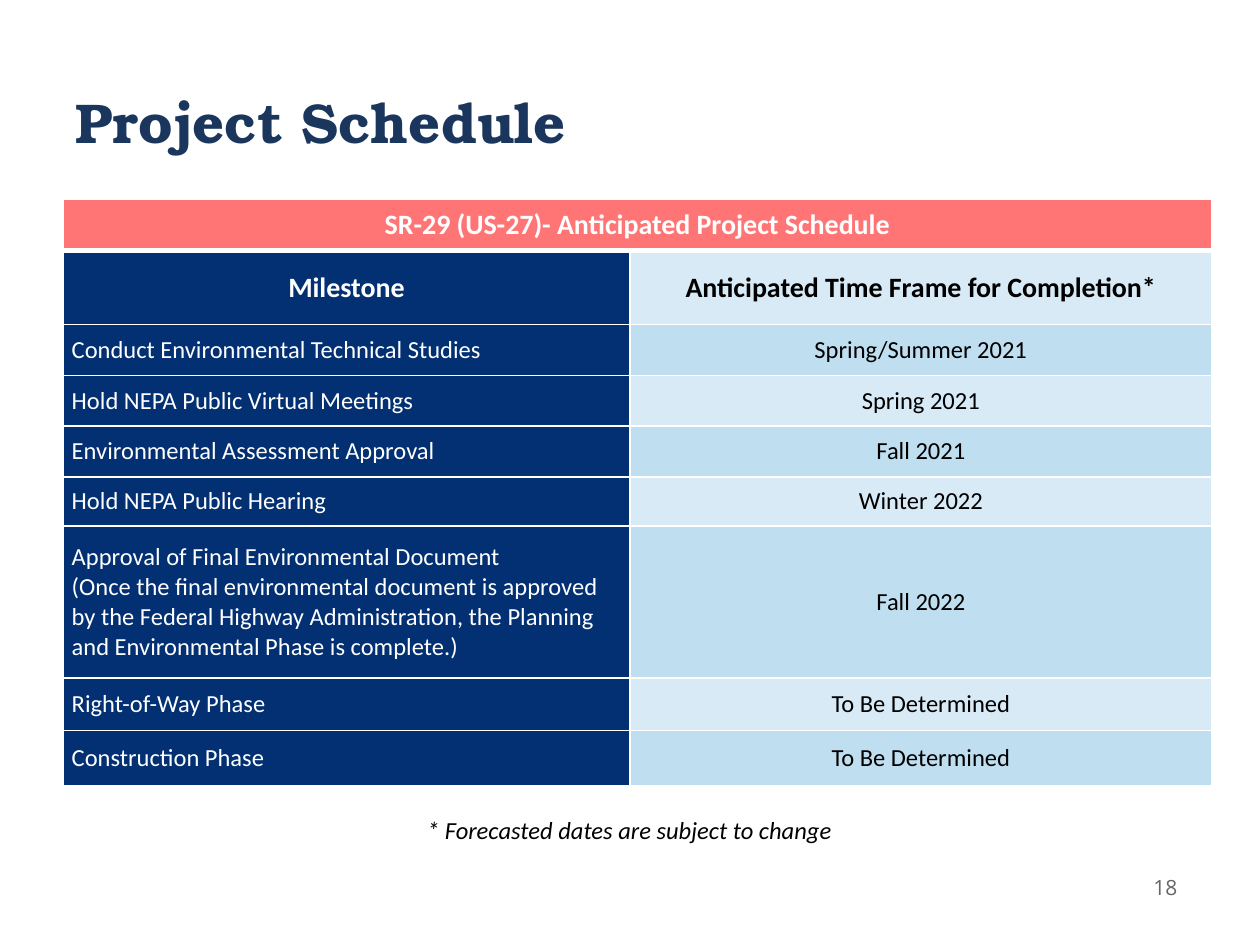
from lxml.etree import SubElement
from pptx import Presentation
from pptx.dml.color import RGBColor
from pptx.enum.text import MSO_ANCHOR, PP_ALIGN
from pptx.oxml.ns import qn
from pptx.util import Pt

NAVY = RGBColor(0x02, 0x30, 0x72)
TITLE_BLUE = RGBColor(0x1B, 0x36, 0x5D)
CORAL = RGBColor(0xFF, 0x75, 0x75)
PALE = RGBColor(0xD7, 0xEA, 0xF5)
SKY = RGBColor(0xBF, 0xDE, 0xEF)
GREY = RGBColor(0x66, 0x66, 0x66)
WHITE = RGBColor(0xFF, 0xFF, 0xFF)
BLACK = RGBColor(0, 0, 0)

TITLE = "Project Schedule"
BANNER = "SR-29 (US-27)- Anticipated Project Schedule"
FOOTNOTE = "* Forecasted dates are subject to change"
PAGE = "18"
SCHEDULE = [  # row height, milestone, time frame
    (42.5, "Milestone", "Anticipated Time Frame for Completion*"),
    (29, "Conduct Environmental Technical Studies", "Spring/Summer 2021"),
    (29, "Hold NEPA Public Virtual Meetings", "Spring 2021"),
    (29, "Environmental Assessment Approval", "Fall 2021"),
    (28, "Hold NEPA Public Hearing", "Winter 2022"),
    (87, "Approval of Final Environmental Document\n"
         "(Once the final environmental document is approved by the Federal "
         "Highway Administration, the Planning and Environmental Phase is complete.)",
     "Fall 2022"),
    (30, "Right-of-Way Phase", "To Be Determined"),
    (31.5, "Construction Phase", "To Be Determined"),
]
BANNER_HEIGHT = 29
COL_WIDTHS = (324, 332.5)
TABLE_LEFT, TABLE_TOP = 36, 114


def write(tf, text, size, color, font="Calibri", align=PP_ALIGN.LEFT,
          bold=False, italic=False):
    for i, line in enumerate(text.split("\n")):
        p = tf.add_paragraph() if i else tf.paragraphs[0]
        p.alignment = align
        r = p.add_run()
        r.text = line
        f = r.font
        f.name, f.size, f.bold, f.italic = font, Pt(size), bold, italic
        f.color.rgb = color


def add_borders(cell, bottom=1, top=1):
    """Draw white cell borders; they must precede the fill in tcPr."""
    tc_pr = cell._tc.get_or_add_tcPr()
    for side, width in (("L", 1), ("R", 1), ("T", top), ("B", bottom)):
        ln = SubElement(tc_pr, qn(f"a:ln{side}"), w=str(Pt(width)))
        fill = SubElement(ln, qn("a:solidFill"))
        SubElement(fill, qn("a:srgbClr"), val=str(WHITE))


def style_cell(cell, fill, **borders):
    add_borders(cell, **borders)
    cell.fill.solid()
    cell.fill.fore_color.rgb = fill
    cell.vertical_anchor = MSO_ANCHOR.MIDDLE
    cell.margin_left = cell.margin_right = Pt(5)
    cell.margin_top = cell.margin_bottom = 0


def add_text(s, box, text, size, color, **fmt):
    tf = s.shapes.add_textbox(*map(Pt, box)).text_frame
    tf.word_wrap = True
    write(tf, text, size, color, align=PP_ALIGN.CENTER, **fmt)
    return tf


def add_schedule(s):
    heights = [BANNER_HEIGHT] + [row[0] for row in SCHEDULE]
    table = s.shapes.add_table(
        len(heights), 2, Pt(TABLE_LEFT), Pt(TABLE_TOP),
        Pt(sum(COL_WIDTHS)), Pt(sum(heights))).table
    for col, width in zip(table.columns, COL_WIDTHS):
        col.width = Pt(width)
    for row, height in zip(table.rows, heights):
        row.height = Pt(height)

    banner = table.cell(0, 0)
    banner.merge(table.cell(0, 1))
    for c in range(2):
        style_cell(table.cell(0, c), CORAL, bottom=3)
    write(banner.text_frame, BANNER, 16, WHITE, align=PP_ALIGN.CENTER, bold=True)

    for i, (_, milestone, time_frame) in enumerate(SCHEDULE):
        header = i == 0
        size = 16 if header else 14
        left, right = table.cell(i + 1, 0), table.cell(i + 1, 1)
        top = 3 if header else 1
        style_cell(left, NAVY, top=top)
        style_cell(right, SKY if i % 2 else PALE, top=top)
        write(left.text_frame, milestone, size, WHITE, bold=header,
              align=PP_ALIGN.CENTER if header else PP_ALIGN.LEFT)
        write(right.text_frame, time_frame, size, BLACK, bold=header,
              align=PP_ALIGN.CENTER)


def main():
    prs = Presentation()
    prs.slide_width, prs.slide_height = Pt(720), Pt(540)
    s = prs.slides.add_slide(prs.slide_layouts[5])

    title = s.shapes.title
    title.left, title.top, title.width, title.height = map(Pt, (36, 24, 648, 90))
    title.text_frame.vertical_anchor = MSO_ANCHOR.MIDDLE
    write(title.text_frame, TITLE, 32, TITLE_BLUE, font="TeX Gyre Bonum", bold=True)

    add_schedule(s)
    add_text(s, (204.5, 462, 310.5, 24.5), FOOTNOTE, 14, BLACK, italic=True)
    page = add_text(s, (648, 492, 36, 30), PAGE, 12, GREY, font="Open Sans")
    page.vertical_anchor = MSO_ANCHOR.MIDDLE
    prs.save("out.pptx")


if __name__ == "__main__":
    main()
